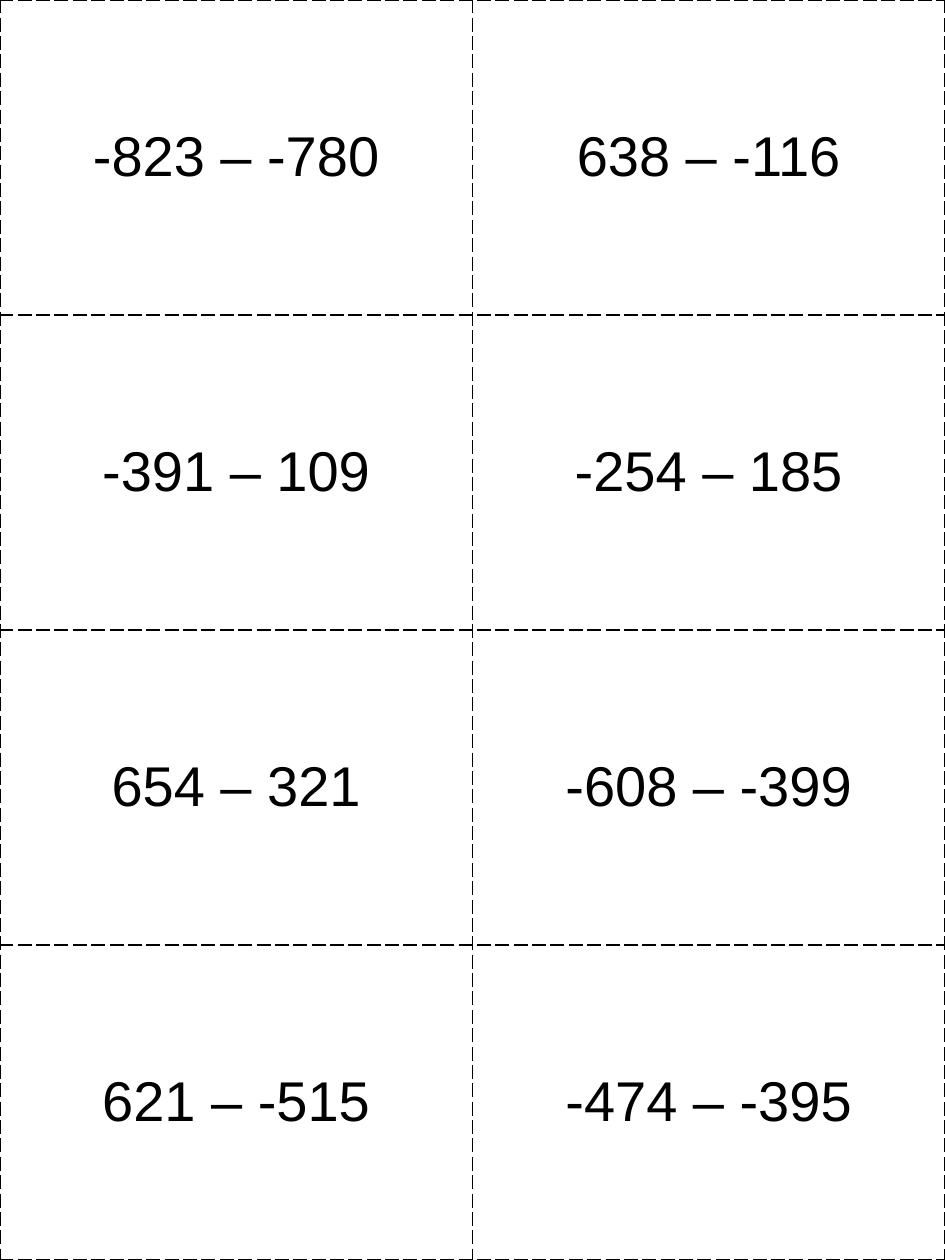
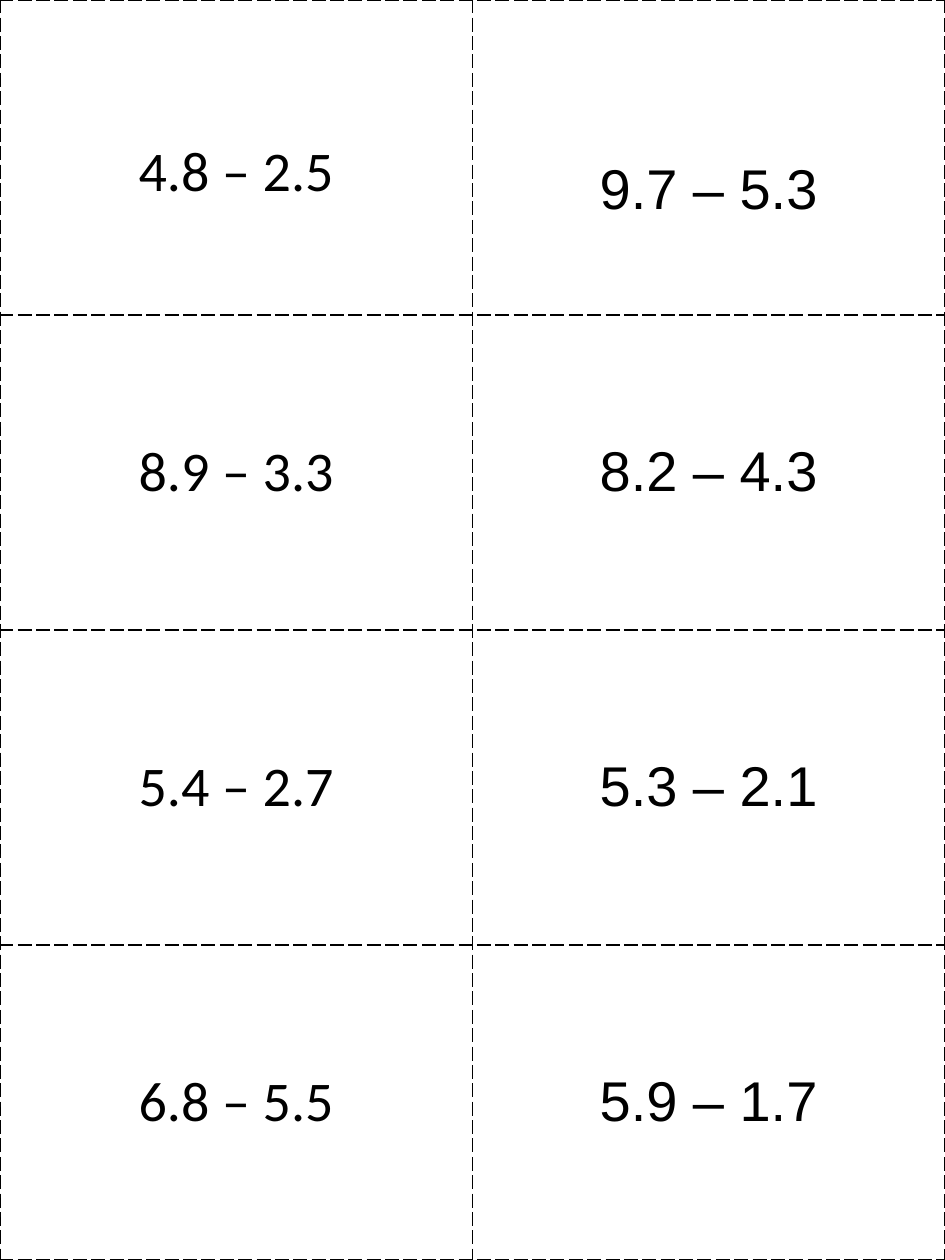
from dataclasses import dataclass

import pptx
import pptx.dml.color
import pptx.enum.text
import pptx.oxml
import pptx.oxml.ns
import pptx.util
from pptx.util import Inches


@dataclass(frozen=True)
class Theme:
    ink: str = "000000"
    text_size: int = 32
    border_width: int = 1
    border_dash: str = "lgDash"
    plain_font: str = "Arial"
    decimal_font: str = "Calibri"


THEME = Theme()
PAGE_WIDTH = 7.5
PAGE_HEIGHT = 10
CELL_TOP_MARGIN = 0.05

INTEGER_CARDS = [
    ("-823 – -780", "638 – -116"),
    ("-391 – 109", "-254 – 185"),
    ("654 – 321", "-608 – -399"),
    ("621 – -515", "-474 – -395"),
]
DECIMAL_CARDS = [
    ("4.8 – 2.5", "9.7 – 5.3"),
    ("8.9 – 3.3", "8.2 – 4.3"),
    ("5.4 – 2.7", "5.3 – 2.1"),
    ("6.8 – 5.5", "5.9 – 1.7"),
]


def add_cut_lines(cell):
    """Give all four sides of a cell the dashed cutting border."""
    properties = cell._tc.get_or_add_tcPr()
    width = pptx.util.Pt(THEME.border_width)
    for side in ("lnL", "lnR", "lnT", "lnB"):
        properties.append(pptx.oxml.parse_xml(
            f'<a:{side} {pptx.oxml.ns.nsdecls("a")} w="{width}">'
            f'<a:solidFill><a:srgbClr val="{THEME.ink}"/></a:solidFill>'
            f'<a:prstDash val="{THEME.border_dash}"/></a:{side}>'))


def fill_card(cell, problem, font_name, drop):
    """Write a problem in a card; drop is extra space above it in inches."""
    add_cut_lines(cell)
    cell.fill.background()
    cell.vertical_anchor = pptx.enum.text.MSO_ANCHOR.MIDDLE
    cell.margin_top = Inches(CELL_TOP_MARGIN + drop)
    cell.text = problem
    para = cell.text_frame.paragraphs[0]
    para.alignment = pptx.enum.text.PP_ALIGN.CENTER
    para.font.name = font_name
    para.font.size = pptx.util.Pt(THEME.text_size)
    para.font.color.rgb = pptx.dml.color.RGBColor.from_string(THEME.ink)


def add_card_page(deck, problems, column_fonts, first_row_drops=(0, 0)):
    page = deck.slides.add_slide(deck.slide_layouts[6])
    row_count, column_count = len(problems), len(column_fonts)
    table = page.shapes.add_table(
        row_count, column_count, 0, 0,
        Inches(PAGE_WIDTH), Inches(PAGE_HEIGHT)).table
    table.first_row = False
    table.horz_banding = False
    for row_index, row in enumerate(problems):
        drops = first_row_drops if row_index == 0 else (0,) * column_count
        for column_index, problem in enumerate(row):
            fill_card(table.cell(row_index, column_index), problem,
                      column_fonts[column_index], drops[column_index])


def main():
    deck = pptx.Presentation()
    deck.slide_width = Inches(PAGE_WIDTH)
    deck.slide_height = Inches(PAGE_HEIGHT)
    add_card_page(deck, INTEGER_CARDS, (THEME.plain_font, THEME.plain_font))
    add_card_page(deck, DECIMAL_CARDS, (THEME.decimal_font, THEME.plain_font),
                  first_row_drops=(0.23, 0.51))
    deck.save("out.pptx")


if __name__ == "__main__":
    main()
